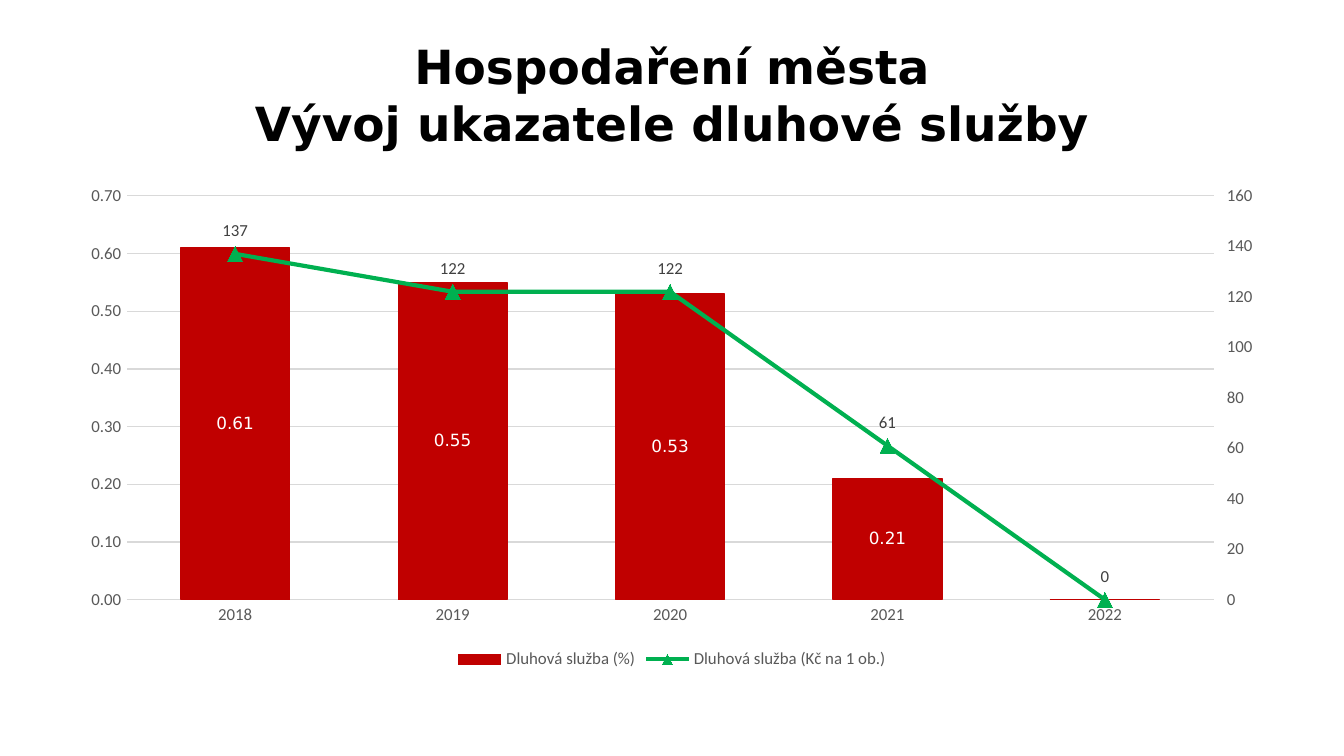
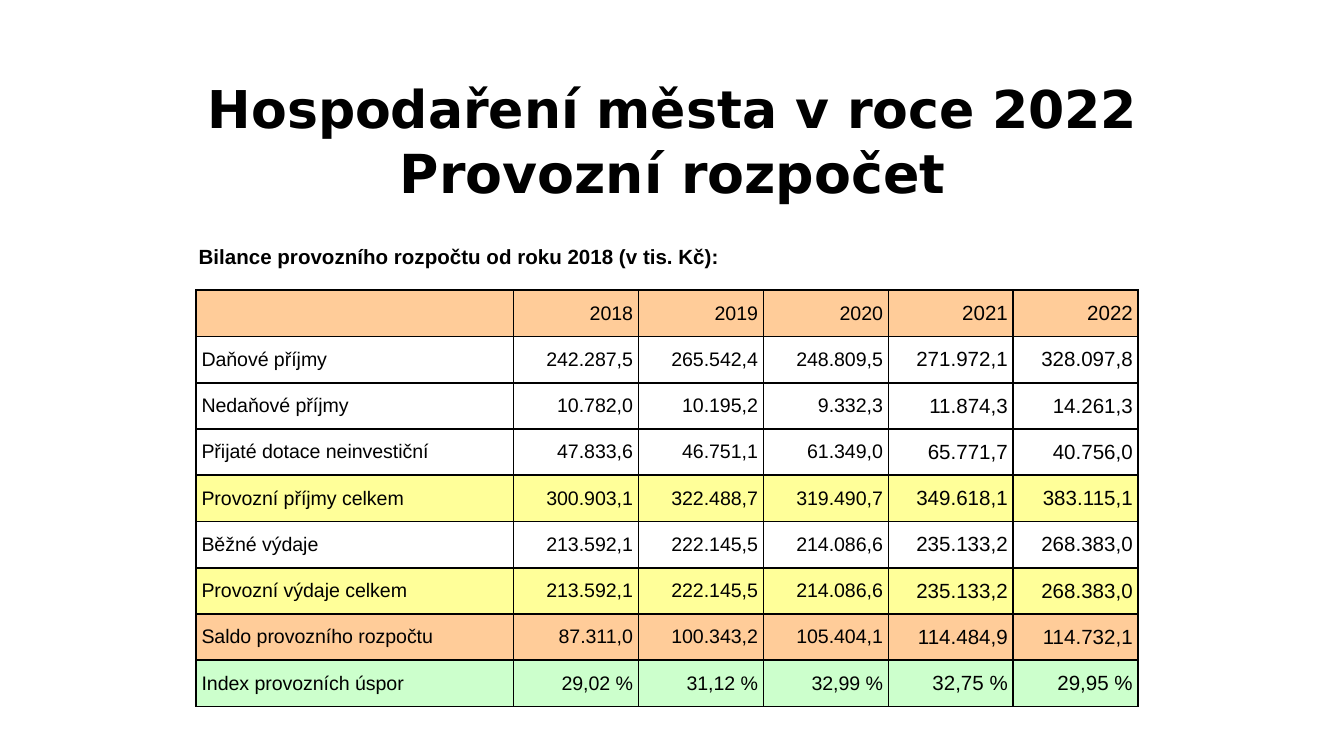
from pptx import Presentation
from pptx.chart.axis import ValueAxis
from pptx.chart.data import CategoryChartData
from pptx.dml.color import RGBColor
from pptx.enum.chart import XL_CHART_TYPE as CT, XL_LABEL_POSITION as LP
from pptx.enum.chart import XL_LEGEND_POSITION, XL_MARKER_STYLE, XL_TICK_MARK as TICK
from pptx.enum.text import MSO_ANCHOR, PP_ALIGN
from pptx.oxml import parse_xml
from pptx.oxml.ns import nsdecls
from pptx.util import Inches, Pt

TITLE_FONT, BODY_FONT, CHART_FONT = "DejaVu Sans", "Arial", "Calibri"
BLACK, WHITE, GREY, GRID = "000000", "FFFFFF", "595959", "D9D9D9"
RED, GREEN = "C00000", "00B050"
ORANGE, YELLOW, MINT = "FFCC99", "FFFF99", "CCFFCC"

YEARS = ["2018", "2019", "2020", "2021", "2022"]
DEBT_PERCENT = [0.61, 0.55, 0.53, 0.21, 0]
DEBT_PER_HEAD = [137, 122, 122, 61, 0]

BUDGET = [
    (ORANGE, "", YEARS),
    (WHITE, "Daňové příjmy",
     ["242.287,5", "265.542,4", "248.809,5", "271.972,1", "328.097,8"]),
    (WHITE, "Nedaňové příjmy",
     ["10.782,0", "10.195,2", "9.332,3", "11.874,3", "14.261,3"]),
    (WHITE, "Přijaté dotace neinvestiční",
     ["47.833,6", "46.751,1", "61.349,0", "65.771,7", "40.756,0"]),
    (YELLOW, "Provozní příjmy celkem",
     ["300.903,1", "322.488,7", "319.490,7", "349.618,1", "383.115,1"]),
    (None, "Běžné výdaje",
     ["213.592,1", "222.145,5", "214.086,6", "235.133,2", "268.383,0"]),
    (YELLOW, "Provozní výdaje celkem",
     ["213.592,1", "222.145,5", "214.086,6", "235.133,2", "268.383,0"]),
    (ORANGE, "Saldo provozního rozpočtu",
     ["87.311,0", "100.343,2", "105.404,1", "114.484,9", "114.732,1"]),
    (MINT, "Index provozních úspor",
     ["29,02 %", "31,12 %", "32,99 %", "32,75 %", "29,95 %"]),
]


def rgb(color):
    return RGBColor.from_string(color)


def set_font(font, size, color, name, bold=False):
    font.size, font.name, font.bold = Pt(size), name, bold
    font.color.rgb = rgb(color)


def set_fill(fill, color):
    fill.solid()
    fill.fore_color.rgb = rgb(color)


def set_line(line, color, width):
    line.color.rgb = rgb(color)
    line.width = Pt(width)


def add_text(s, box, text, align, sizes, font):
    """Add a bold paragraph; sizes holds one size per line."""
    tf = s.shapes.add_textbox(*map(Inches, box)).text_frame
    tf.word_wrap = True
    tf.vertical_anchor = MSO_ANCHOR.MIDDLE
    p = tf.paragraphs[0]
    p.text = text
    p.alignment = align
    for r, size in zip(p.runs, sizes):
        set_font(r.font, size, BLACK, font, bold=True)


def add_title(s, box, lines, sizes):
    add_text(s, box, "\v".join(lines), PP_ALIGN.CENTER, sizes, TITLE_FONT)


def move_to_right_axis(chart):
    """Turn the second column series into a line on its own axis, and return that axis."""
    bars = chart.plots[0]._element
    plot_area = bars.getparent()
    ser = bars.sers[1]
    for tag in ser.xpath("c:invertIfNegative"):
        ser.remove(tag)
    ns = nsdecls("c")
    line_chart = parse_xml(
        f'<c:lineChart {ns}><c:grouping val="standard"/><c:varyColors val="0"/>'
        '<c:marker val="1"/><c:axId val="5001"/><c:axId val="5002"/></c:lineChart>')
    line_chart.insert(2, ser)
    bars.addnext(line_chart)
    cat_ax = parse_xml(
        f'<c:catAx {ns}><c:axId val="5001"/><c:scaling><c:orientation val="minMax"/></c:scaling>'
        '<c:delete val="1"/><c:axPos val="b"/><c:crossAx val="5002"/>'
        '<c:crosses val="autoZero"/></c:catAx>')
    val_ax = parse_xml(
        f'<c:valAx {ns}><c:axId val="5002"/><c:scaling><c:orientation val="minMax"/></c:scaling>'
        '<c:delete val="0"/><c:axPos val="r"/><c:numFmt formatCode="0" sourceLinked="0"/>'
        '<c:majorTickMark val="out"/><c:minorTickMark val="none"/><c:tickLblPos val="nextTo"/>'
        '<c:crossAx val="5001"/><c:crosses val="max"/></c:valAx>')
    plot_area.xpath("c:valAx")[0].addnext(cat_ax)
    cat_ax.addnext(val_ax)
    return ValueAxis(val_ax)


def style_value_axis(axis, top, step, tick, number_format):
    axis.minimum_scale, axis.maximum_scale, axis.major_unit = 0, top, step
    axis.major_tick_mark = tick
    axis.format.line.fill.background()
    axis.tick_labels.number_format = number_format
    axis.tick_labels.number_format_is_linked = False
    set_font(axis.tick_labels.font, 9, GREY, CHART_FONT)


def label_values(series, position, color, font, number_format):
    labels = series.data_labels
    labels.show_value = True
    labels.position = position
    labels.number_format = number_format
    labels.number_format_is_linked = False
    set_font(labels.font, 9, color, font)
    return labels


def add_debt_chart(s, box):
    data = CategoryChartData()
    data.categories = YEARS
    data.add_series("Dluhová služba (%)", DEBT_PERCENT, "0.00")
    data.add_series("Dluhová služba (Kč na 1 ob.)", DEBT_PER_HEAD, "0")
    chart = s.shapes.add_chart(CT.COLUMN_CLUSTERED, *map(Inches, box), data).chart
    chart.has_title = False
    set_font(chart.font, 10, BLACK, CHART_FONT)
    cat_axis, left_axis = chart.category_axis, chart.value_axis
    right_axis = move_to_right_axis(chart)

    chart.has_legend = True
    chart.legend.position = XL_LEGEND_POSITION.BOTTOM
    chart.legend.include_in_layout = False
    set_font(chart.legend.font, 9, GREY, CHART_FONT)

    cat_axis.major_tick_mark = TICK.NONE
    set_line(cat_axis.format.line, GRID, 0.75)
    set_font(cat_axis.tick_labels.font, 9, GREY, CHART_FONT)
    style_value_axis(left_axis, 0.7, 0.1, TICK.NONE, "0.00")
    set_line(left_axis.major_gridlines.format.line, GRID, 0.75)
    style_value_axis(right_axis, 160, 20, TICK.OUTSIDE, "0")

    columns, lines = chart.plots
    columns.gap_width, columns.overlap = 100, -27
    columns.vary_by_categories = False
    percent, per_head = columns.series[0], lines.series[0]
    percent.invert_if_negative = False
    for part in (percent, percent.points[4]):
        set_fill(part.format.fill, RED)
        set_line(part.format.line, RED, 0.75)
    labels = label_values(percent, LP.CENTER, WHITE, TITLE_FONT, "0.00")
    labels._element.insert(0, parse_xml(
        f'<c:dLbl {nsdecls("c")}><c:idx val="4"/><c:delete val="1"/></c:dLbl>'))

    per_head.smooth = False
    set_line(per_head.format.line, GREEN, 2.25)
    marker = per_head.marker
    marker.style, marker.size = XL_MARKER_STYLE.TRIANGLE, 8
    set_fill(marker.format.fill, GREEN)
    set_line(marker.format.line, GREEN, 0.75)
    label_values(per_head, LP.ABOVE, "404040", CHART_FONT, "0")


def set_borders(cell):
    tc_pr = cell._tc.get_or_add_tcPr()
    for side in "LRTB":
        tc_pr.append(parse_xml(
            f'<a:ln{side} {nsdecls("a")} w="{Pt(1)}"><a:solidFill>'
            f'<a:srgbClr val="{BLACK}"/></a:solidFill></a:ln{side}>'))


def fill_cell(cell, text, color, align, size):
    cell.margin_left = cell.margin_right = Inches(0.04)
    cell.margin_top = cell.margin_bottom = 0
    cell.vertical_anchor = MSO_ANCHOR.MIDDLE
    set_borders(cell)
    if color:
        set_fill(cell.fill, color)
    else:
        cell.fill.background()
    p = cell.text_frame.paragraphs[0]
    p.text = text
    p.alignment = align
    for r in p.runs:
        set_font(r.font, size, BLACK, BODY_FONT)


def add_budget_table(s, box):
    table = s.shapes.add_table(len(BUDGET), len(YEARS) + 1, *map(Inches, box)).table
    table.first_row = table.horz_banding = False
    for i, column in enumerate(table.columns):
        column.width = Inches(0.93 if i else 2.36)
    for i, (color, name, values) in enumerate(BUDGET):
        fill_cell(table.cell(i, 0), name, color, PP_ALIGN.LEFT, 10.5)
        for j, value in enumerate(values, 1):
            fill_cell(table.cell(i, j), value, color, PP_ALIGN.RIGHT, 11 if j > 3 else 10.5)


def main():
    prs = Presentation()
    prs.slide_width = Inches(10)
    prs.slide_height = prs.slide_width * 9 // 16
    blank = prs.slide_layouts[6]

    s = prs.slides.add_slide(blank)
    add_title(s, (0.5, 0.23, 9, 0.94),
              ["Hospodaření města", "Vývoj ukazatele dluhové služby"], (25.2, 25.2))
    add_debt_chart(s, (0.5, 1.31, 9, 3.71))

    s = prs.slides.add_slide(blank)
    add_title(s, (0.51, 0.61, 8.99, 0.87),
              ["Hospodaření města v roce 2022", "Provozní rozpočet"], (27.9, 28.8))
    add_budget_table(s, (1.46, 2.16, 7.01, 3.1))
    add_text(s, (1.38, 1.76, 7.17, 0.29), "Bilance provozního rozpočtu od roku 2018 (v tis. Kč):",
             PP_ALIGN.JUSTIFY, (11,), BODY_FONT)

    prs.save("out.pptx")


if __name__ == "__main__":
    main()
